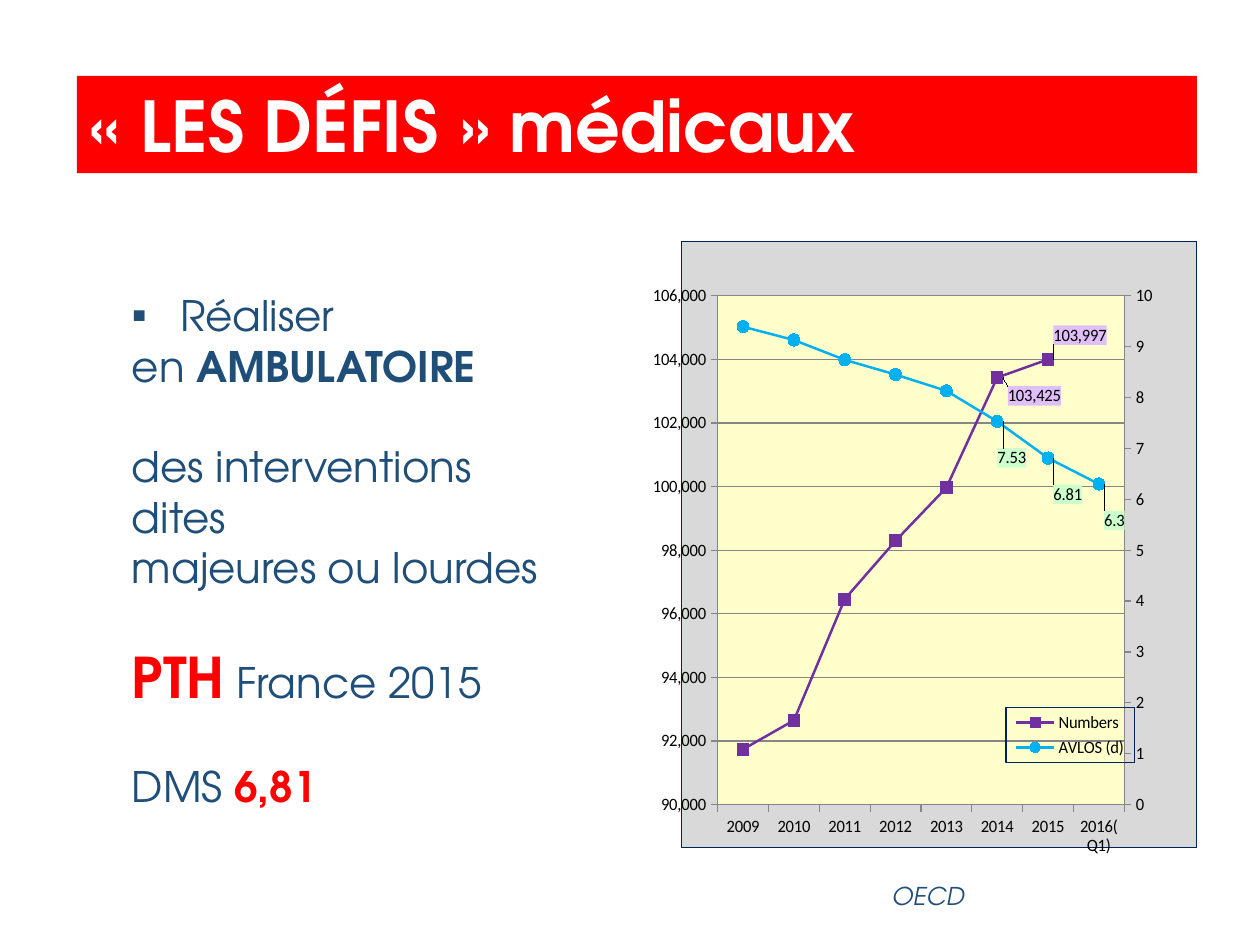
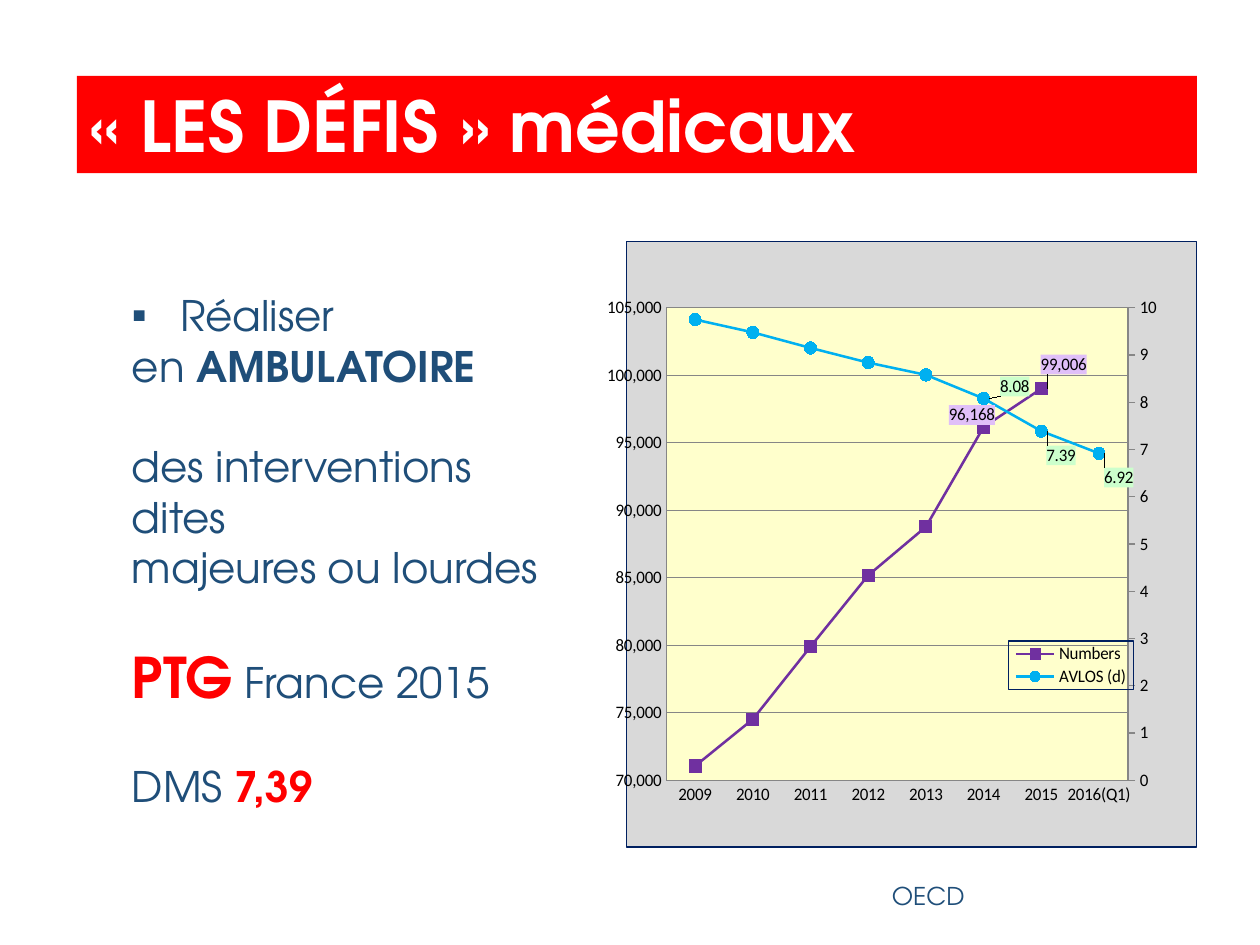
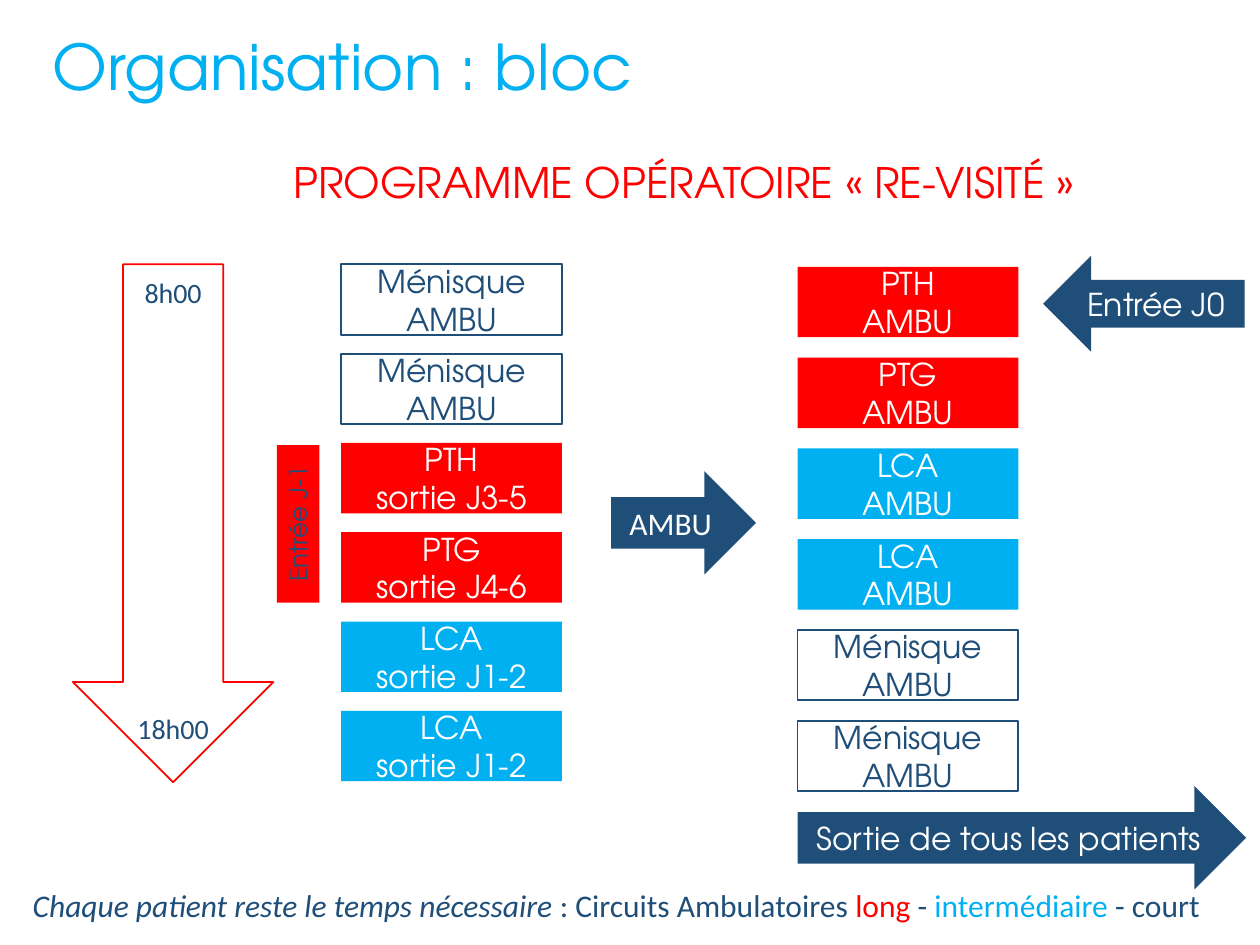
from copy import deepcopy

from lxml.etree import SubElement
from pptx import Presentation
from pptx.chart.data import CategoryChartData
from pptx.dml.color import RGBColor
from pptx.enum.chart import XL_CHART_TYPE, XL_MARKER_STYLE, XL_TICK_MARK
from pptx.enum.shapes import MSO_SHAPE
from pptx.enum.text import MSO_ANCHOR, PP_ALIGN
from pptx.oxml import parse_xml
from pptx.oxml.ns import nsdecls, qn
from pptx.util import Cm, Pt

RED, NAVY, CYAN, WHITE = "FF0000", "1F4E79", "00B0F0", "FFFFFF"
PURPLE, LILAC, MINT = "7030A0", "E0BFF8", "CCFFCC"
GREY, CREAM, BORDER, AXIS = "D9D9D9", "FFFFCC", "002060", "868686"
HEADING_FONT, PLAIN_FONT = "TeX Gyre Adventor", "Calibri"
YEARS = ["2009", "2010", "2011", "2012", "2013", "2014", "2015", "2016(Q1)"]


def rgb(value):
    return RGBColor.from_string(value)


def write(shape, paragraphs, size=18, color=NAVY, font=HEADING_FONT, bold=False,
          italic=False, align=PP_ALIGN.LEFT, anchor=MSO_ANCHOR.TOP, wrap=True,
          gaps=None, line_spacing=None, margins=(0.25, 0.13)):
    """Each paragraph is a string or a list of (text, overrides) runs."""
    frame = shape.text_frame
    frame.word_wrap, frame.vertical_anchor = wrap, anchor
    frame.margin_left = frame.margin_right = Cm(margins[0])
    frame.margin_top = frame.margin_bottom = Cm(margins[1])
    for index, runs in enumerate(paragraphs):
        paragraph = frame.paragraphs[0] if index == 0 else frame.add_paragraph()
        paragraph.alignment = align
        paragraph.space_before = Pt((gaps or {}).get(index, 0))
        if line_spacing:
            paragraph.line_spacing = line_spacing
        for text, overrides in [(runs, {})] if isinstance(runs, str) else runs:
            run = paragraph.add_run()
            run.text = text
            run.font.name = font
            run.font.size = Pt(overrides.get("size", size))
            run.font.bold = overrides.get("bold", bold)
            run.font.italic = overrides.get("italic", italic)
            run.font.color.rgb = rgb(overrides.get("color", color))


def add_label(slide, box, paragraphs, **text_format):
    shape = slide.shapes.add_textbox(*map(Cm, box))
    write(shape, paragraphs, **text_format)
    return shape


def add_block(slide, kind, box, paragraphs, fill, line=None, **text_format):
    shape = slide.shapes.add_shape(kind, *map(Cm, box))
    shape.shadow.inherit = False
    shape.fill.solid()
    shape.fill.fore_color.rgb = rgb(fill)
    if line:
        shape.line.color.rgb = rgb(line)
        shape.line.width = Pt(1)
    else:
        shape.line.fill.background()
    write(shape, paragraphs, **text_format)
    return shape


# Chart parts that need XML

def shape_properties(fill=None, line=None):
    solid = '<a:solidFill><a:srgbClr val="{}"/></a:solidFill>'
    inside = solid.format(fill) if fill else "<a:noFill/>"
    outline = solid.format(line) if line else "<a:noFill/>"
    return parse_xml(f'<c:spPr {nsdecls("c", "a")}>{inside}'
                     f'<a:ln w="9525">{outline}</a:ln></c:spPr>')


def manual_layout(x, y, width=None, height=None, inner=False):
    layout = parse_xml(f'<c:layout {nsdecls("c")}><c:manualLayout/></c:layout>')
    settings = [("layoutTarget", "inner" if inner else None),
                ("xMode", "edge" if width else None),
                ("yMode", "edge" if width else None),
                ("x", x), ("y", y), ("w", width), ("h", height)]
    for tag, value in settings:
        if value is not None:
            SubElement(layout[0], qn(f"c:{tag}")).set("val", str(value))
    return layout


def drop(parent, tag):
    for child in parent.findall(qn(tag)):
        parent.remove(child)


def label_points(series_xml, offsets, fill):
    """Show values of the points in offsets, moved by fractions of the chart."""
    def flags(shown):
        names = ["LegendKey", "Val", "CatName", "SerName", "Percent", "BubbleSize"]
        return "".join(f'<c:show{name} val="{int(shown and name == "Val")}"/>'
                       for name in names)

    extension = ('<c:extLst><c:ext uri="{CE6537A1-D6FC-4f65-9D91-7224C49458BB}" '
                 'xmlns:c15="http://schemas.microsoft.com/office/drawing/2012/chart">'
                 '<c15:showLeaderLines val="1"/></c:ext></c:extLst>')
    labels = parse_xml(f'<c:dLbls {nsdecls("c")}>{flags(False)}{extension}</c:dLbls>')
    for place, (point, offset) in enumerate(offsets.items()):
        label = parse_xml(f'<c:dLbl {nsdecls("c")}><c:idx val="{point}"/>'
                          f'<c:dLblPos val="r"/>{flags(True)}</c:dLbl>')
        label.insert(1, manual_layout(*offset))
        label.insert(2, shape_properties(fill))
        labels.insert(place, label)
    series_xml.find(qn("c:cat")).addprevious(labels)


def move_to_right_axis(plot_area):
    """Give the second series its own line plot with a scale from 0 to 10."""
    left_plot = plot_area.find(qn("c:lineChart"))
    right_plot = deepcopy(left_plot)
    left_plot.remove(left_plot.findall(qn("c:ser"))[1])
    right_plot.remove(right_plot.findall(qn("c:ser"))[0])
    left_plot.addnext(right_plot)
    left_axis = plot_area.find(qn("c:valAx"))
    right_axis = deepcopy(left_axis)
    hidden_axis = deepcopy(plot_area.find(qn("c:catAx")))
    left_axis.addnext(right_axis)
    right_axis.addnext(hidden_axis)
    category_id, value_id = "5001", "5002"
    for reference, identifier in zip(right_plot.findall(qn("c:axId")),
                                     (category_id, value_id)):
        reference.set("val", identifier)
    for axis, own, other in ((hidden_axis, category_id, value_id),
                             (right_axis, value_id, category_id)):
        axis.find(qn("c:axId")).set("val", own)
        axis.find(qn("c:crossAx")).set("val", other)
    hidden_axis.find(qn("c:delete")).set("val", "1")
    drop(right_axis, "c:majorGridlines")
    right_axis.find(qn("c:axPos")).set("val", "r")
    right_axis.find(qn("c:crosses")).set("val", "max")
    right_axis.find(qn("c:numFmt")).set("formatCode", "General")
    right_axis.find(qn("c:majorTickMark")).set("val", "out")
    right_axis.find(qn("c:majorUnit")).set("val", "1")
    scaling = right_axis.find(qn("c:scaling"))
    scaling.find(qn("c:max")).set("val", "10")
    scaling.find(qn("c:min")).set("val", "0")


def add_stay_chart(slide, box, numbers, stays, scale, tick, plot_box, legend_box,
                   number_labels, stay_labels):
    chart_data = CategoryChartData()
    chart_data.categories = YEARS
    chart_data.add_series("Numbers", numbers, "#,##0")
    chart_data.add_series("AVLOS (d)", stays, "General")
    chart = slide.shapes.add_chart(XL_CHART_TYPE.LINE_MARKERS, *map(Cm, box),
                                   chart_data).chart
    chart.has_title = False
    chart.font.size, chart.font.name = Pt(10), PLAIN_FONT
    chart.font.color.rgb = rgb("000000")
    chart.plots[0].vary_by_categories = False

    # Axes
    value_axis, category_axis = chart.value_axis, chart.category_axis
    value_axis.minimum_scale, value_axis.maximum_scale, value_axis.major_unit = scale
    value_axis.has_major_gridlines = True
    value_axis.major_gridlines.format.line.color.rgb = rgb(AXIS)
    value_axis.tick_labels.number_format = "#,##0"
    value_axis.tick_labels.number_format_is_linked = False
    for axis in (value_axis, category_axis):
        axis.major_tick_mark, axis.minor_tick_mark = tick, XL_TICK_MARK.NONE
        axis.format.line.color.rgb = rgb(AXIS)

    # Series
    styles = [(PURPLE, XL_MARKER_STYLE.SQUARE, number_labels, LILAC),
              (CYAN, XL_MARKER_STYLE.CIRCLE, stay_labels, MINT)]
    series_xml = chart.plots[0]._element.findall(qn("c:ser"))
    for series, element, style in zip(chart.plots[0].series, series_xml, styles):
        color, marker, offsets, label_fill = style
        series.smooth = False
        series.format.line.color.rgb = rgb(color)
        series.format.line.width = Pt(1.5)
        series.marker.style, series.marker.size = marker, 7
        series.marker.format.fill.solid()
        series.marker.format.fill.fore_color.rgb = rgb(color)
        series.marker.format.line.color.rgb = rgb(color)
        label_points(element, offsets, label_fill)

    # Legend
    chart.has_legend = True
    chart.legend.include_in_layout = False
    chart.legend.font.size = Pt(10)
    legend = chart.legend._element
    drop(legend, "c:layout")
    legend.find(qn("c:overlay")).addprevious(manual_layout(*legend_box))
    legend.find(qn("c:txPr")).addprevious(shape_properties(line=BORDER))

    # Backgrounds and right axis
    chart_space = chart._chartSpace
    plot_area = chart_space.chart.plotArea
    drop(plot_area, "c:layout")
    plot_area.insert(0, manual_layout(*plot_box, inner=True))
    move_to_right_axis(plot_area)
    plot_area.append(shape_properties(CREAM))
    chart_space.find(qn("c:txPr")).addprevious(shape_properties(GREY, BORDER))


def add_challenge_slide(presentation, operation, stay, source_italic, **chart_settings):
    slide = presentation.slides.add_slide(presentation.slide_layouts[6])
    # Title band
    add_block(slide, MSO_SHAPE.RECTANGLE, (1.55, 1.53, 22.58, 1.96),
              ["« LES DÉFIS » médicaux"], RED, size=40, color=WHITE, bold=True)
    # Message
    message = add_label(slide, (2.41, 5.71, 10.77, 11.89), [
        "Réaliser",
        [("en ", {}), ("AMBULATOIRE", {"bold": True})],
        "des interventions",
        "dites",
        "majeures ou lourdes",
        [(operation, {"size": 32, "color": RED, "bold": True}), (" France 2015", {})],
        [("DMS ", {}), (stay, {"color": RED, "bold": True})],
    ], size=24, gaps={2: 28.8, 5: 28.8, 6: 28.8})
    properties = message.text_frame.paragraphs[0]._p.get_or_add_pPr()
    properties.set("marL", str(Cm(0.97)))
    properties.set("indent", str(-Cm(0.97)))
    SubElement(properties, qn("a:buFont")).set("typeface", PLAIN_FONT)
    SubElement(properties, qn("a:buChar")).set("char", "▪")
    # Chart and its source
    add_stay_chart(slide, **chart_settings)
    add_label(slide, (17.73, 17.63, 1.98, 0.86), ["OECD"], size=14,
              italic=source_italic, wrap=False)


def add_programme(slide, left, top, pitch, operations):
    """Stack one block per operation; colour tells the length of the circuit."""
    colors = {"Ménisque": (WHITE, NAVY, NAVY), "PTH": (RED, None, WHITE),
              "PTG": (RED, None, WHITE), "LCA": (CYAN, None, WHITE)}
    for row, (name, stay) in enumerate(operations):
        fill, line, color = colors[name]
        add_block(slide, MSO_SHAPE.RECTANGLE, (left, top + row * pitch, 4.45, 1.42),
                  [name, stay], fill, line, color=color, align=PP_ALIGN.CENTER,
                  anchor=MSO_ANCHOR.MIDDLE)


def add_day_arrow(slide, box):
    add_block(slide, MSO_SHAPE.DOWN_ARROW, box, ["8h00", "18h00"], WHITE, RED, size=16,
              font=PLAIN_FONT, align=PP_ALIGN.CENTER, gaps={1: 230},
              margins=(0.1, 0.23))


def add_organisation_slide(presentation):
    slide = presentation.slides.add_slide(presentation.slide_layouts[6])
    # Headings
    add_label(slide, (0.81, 0.43, 12.37, 1.8), ["Organisation : bloc"], size=36,
              color=CYAN, wrap=False)
    add_label(slide, (3.48, 2.51, 20.62, 1.6), ["PROGRAMME OPÉRATOIRE « RE-VISITÉ »"],
              size=24, color=RED, align=PP_ALIGN.CENTER, line_spacing=1.5)
    # Programmes before and after
    add_day_arrow(slide, (1.47, 5.33, 4.04, 10.44))
    add_programme(slide, 6.88, 5.33, 1.8, [
        ("Ménisque", "AMBU"), ("Ménisque", "AMBU"), ("PTH", "sortie J3-5"),
        ("PTG", "sortie J4-6"), ("LCA", "sortie J1-2"), ("LCA", "sortie J1-2")])
    add_programme(slide, 16.08, 5.38, 1.83, [
        (name, "AMBU") for name in ("PTH", "PTG", "LCA", "LCA", "Ménisque", "Ménisque")])
    # Arrows
    for kind, box, text, font in [
            (MSO_SHAPE.RIGHT_ARROW, (12.32, 9.5, 2.92, 2.08), "AMBU", PLAIN_FONT),
            (MSO_SHAPE.RIGHT_ARROW, (16.08, 15.85, 9.04, 2.08),
             "Sortie de tous les patients", HEADING_FONT),
            (MSO_SHAPE.LEFT_ARROW, (21.03, 5.16, 4.06, 1.93), "Entrée J0",
             HEADING_FONT)]:
        add_block(slide, kind, box, [text], NAVY, color=WHITE, font=font,
                  align=PP_ALIGN.CENTER, anchor=MSO_ANCHOR.MIDDLE)
    # Admission the day before
    admission = add_block(slide, MSO_SHAPE.RECTANGLE, (4.42, 10.13, 3.18, 0.86),
                          ["Entrée J-1"], RED, size=14, align=PP_ALIGN.CENTER)
    admission.rotation = 270
    # Conclusion
    add_label(slide, (0.41, 17.73, 24.36, 1.02), [[
        ("Chaque patient reste le temps nécessaire ", {"italic": True}),
        (": Circuits Ambulatoires ", {}), ("long", {"color": RED}), (" - ", {}),
        ("intermédiaire ", {"color": CYAN}), ("- court", {})]],
        font=PLAIN_FONT, wrap=False)


def main():
    presentation = Presentation()
    presentation.slide_width, presentation.slide_height = Cm(25.4), Cm(19.05)
    add_challenge_slide(
        presentation, "PTH", "6,81", True, box=(13.16, 4.85, 10.97, 12.4),
        numbers=[91742, 92649, 96460, 98293, 99967, 103425, 103997, None],
        stays=[9.39, 9.13, 8.74, 8.45, 8.13, 7.53, 6.81, 6.3],
        scale=(90000, 106000, 2000), tick=XL_TICK_MARK.OUTSIDE,
        plot_box=(0.07, 0.09, 0.79, 0.84), legend_box=(0.63, 0.77, 0.25, 0.09),
        number_labels={5: (0, 0.03), 6: (-0.01, -0.04)},
        stay_labels={5: (-0.02, 0.06), 6: (-0.01, 0.06), 7: (-0.01, 0.06)})
    add_challenge_slide(
        presentation, "PTG", "7,39", False, box=(12.24, 4.85, 11.89, 12.24),
        numbers=[71056, 74522, 79898, 85180, 88777, 96168, 99006, None],
        stays=[9.75, 9.48, 9.15, 8.84, 8.58, 8.08, 7.39, 6.92],
        scale=(70000, 105000, 5000), tick=XL_TICK_MARK.NONE,
        plot_box=(0.07, 0.11, 0.81, 0.78), legend_box=(0.67, 0.66, 0.22, 0.08),
        number_labels={5: (-0.08, -0.02), 6: (-0.02, -0.04)},
        stay_labels={5: (0.01, -0.02), 6: (-0.01, 0.04), 7: (-0.01, 0.04)})
    add_organisation_slide(presentation)
    presentation.save("out.pptx")


if __name__ == "__main__":
    main()
